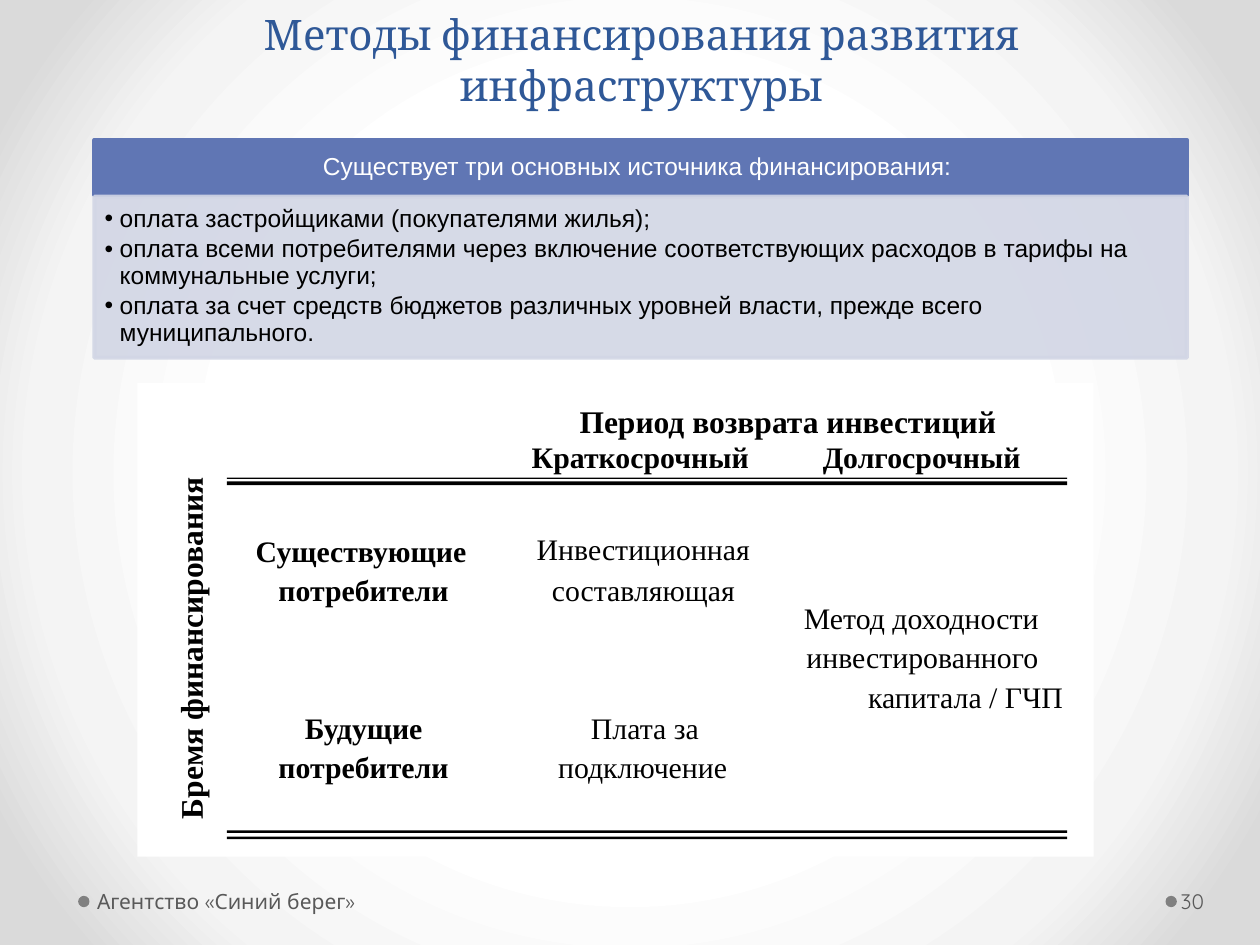
"""Build the slide on methods of financing infrastructure development."""
import lxml.etree
import pptx
import pptx.dml.color
import pptx.enum.shapes
import pptx.enum.text
import pptx.oxml.ns
import pptx.util

Inches, Pt = pptx.util.Inches, pptx.util.Pt
ALIGN, ANCHOR = pptx.enum.text.PP_ALIGN, pptx.enum.text.MSO_ANCHOR
FIT = pptx.enum.text.MSO_AUTO_SIZE
SHAPE = pptx.enum.shapes.MSO_SHAPE
qn = pptx.oxml.ns.qn

TITLE = "Методы финансирования развития инфраструктуры"
SOURCES_HEADING = "Существует три основных источника финансирования: "
SOURCES = [
    "оплата застройщиками (покупателями жилья);",
    "оплата всеми потребителями через включение соответствующих расходов в тарифы на коммунальные услуги;",
    "оплата за счет средств бюджетов различных уровней власти, прежде всего муниципального.",
]
BURDEN = ("Бремя финансирования", 0.14, 4.98, 2.74)
PERIOD = ("Период возврата инвестиций", 4.6, 3.19, 3.35)
HEADINGS = [
    ("Краткосрочный", 4.22, 3.48, 1.75),
    ("Долгосрочный", 6.53, 3.48, 1.59),
    ("Существующие", 2.03, 4.23, 1.76),
    ("потребители", 2.21, 4.54, 1.36),
    ("Будущие", 2.42, 5.63, 1.02),
    ("потребители", 2.21, 5.94, 1.36),
]
METHODS = [
    ("Инвестиционная", 4.26, 4.21, 1.76),
    ("составляющая", 4.38, 4.54, 1.47),
    ("Плата за", 4.69, 5.63, 0.93),
    ("подключение", 4.43, 5.94, 1.36),
    ("Метод доходности", 6.38, 4.76, 1.97),
    ("инвестированного", 6.4, 5.07, 1.92),
    ("капитала / ГЧП", 6.89, 5.39, 1.56),
]
RULES = [(3.79, 0.01), (3.82, 0.03), (6.59, 0.02), (6.64, 0.02)]
FOOTERS = [("Агентство «Синий берег»", 0.72, 3.11, 0.05, 0.62),
           ("30", 9.34, 0.61, 0.03, 9.25)]
BACKDROP = [(50, "FFFFFF"), (76, "F4F4F4"), (92, "DADADA")]


def rgb(color):
    return pptx.dml.color.RGBColor.from_string(color)


def paint_backdrop(slide):
    slide.background.fill.gradient()
    gradient = slide.element.find(".//" + qn("a:gradFill"))
    for child in list(gradient):
        gradient.remove(child)
    stops = lxml.etree.SubElement(gradient, qn("a:gsLst"))
    for position, color in BACKDROP:
        stop = lxml.etree.SubElement(stops, qn("a:gs"), pos=str(position * 1000))
        lxml.etree.SubElement(stop, qn("a:srgbClr"), val=color)
    circle = lxml.etree.SubElement(gradient, qn("a:path"), path="circle")
    lxml.etree.SubElement(circle, qn("a:fillToRect"),
                          dict.fromkeys("ltrb", "50000"))


def add_block(slide, kind, box, fill, line=None, opacity=None):
    block = slide.shapes.add_shape(kind, *map(Inches, box))
    block.shadow.inherit = False
    block.fill.solid()
    block.fill.fore_color.rgb = rgb(fill)
    if line:
        block.line.color.rgb = rgb(line)
        block.line.width = Pt(2.25)
    else:
        block.line.fill.background()
    if opacity:
        for color in block.element.spPr.iter(qn("a:srgbClr")):
            lxml.etree.SubElement(color, qn("a:alpha"), val=str(opacity * 1000))
    return block


def set_frame(shape, insets, anchor=ANCHOR.TOP, wrap=True):
    frame = shape.text_frame
    frame.word_wrap = wrap
    frame.vertical_anchor = anchor
    (frame.margin_left, frame.margin_top,
     frame.margin_right, frame.margin_bottom) = map(Inches, insets)
    return frame


def write(paragraph, text, size, font, color, bold=False, align=ALIGN.LEFT, spacing=None):
    paragraph.alignment = align
    paragraph.line_spacing = spacing
    run = paragraph.add_run()
    run.text = text
    run.font.size = Pt(size)
    run.font.name = font
    run.font.bold = bold
    run.font.color.rgb = rgb(color)


def add_bullet(paragraph):
    properties = paragraph._p.get_or_add_pPr()
    properties.set("marL", str(Inches(0.12)))
    properties.set("indent", str(-Inches(0.12)))
    lxml.etree.SubElement(properties, qn("a:buFont"), typeface="Arial")
    lxml.etree.SubElement(properties, qn("a:buChar"), char="•")


def add_label(slide, label, size=17, bold=False, rotation=0):
    text, left, top, width = label
    height = 0.3 if size == 18 else 0.29
    box = slide.shapes.add_textbox(*map(Inches, (left, top, width, height)))
    box.rotation = rotation
    frame = set_frame(box, (0, 0, 0, 0), wrap=False)
    frame.auto_size = FIT.SHAPE_TO_FIT_TEXT
    write(frame.paragraphs[0], text, size, "Times New Roman", "000000", bold)


def add_sources(slide):
    heading = add_block(slide, SHAPE.RECTANGLE, (0.75, 1.11, 8.67, 0.44), "6076B4", "6076B4")
    frame = set_frame(heading, (0.11, 0.06, 0.11, 0.06), ANCHOR.MIDDLE)
    write(frame.paragraphs[0], SOURCES_HEADING, 14, "Arial", "FFFFFF",
          align=ALIGN.CENTER, spacing=0.9)
    body = add_block(slide, SHAPE.RECTANGLE, (0.75, 1.56, 8.67, 1.28), "D2D6E5", "D2D6E5", 90)
    frame = set_frame(body, (0.08, 0.08, 0.11, 0.12))
    for index, source in enumerate(SOURCES):
        paragraph = frame.add_paragraph() if index else frame.paragraphs[0]
        write(paragraph, source, 14, "Arial", "000000", spacing=0.9)
        paragraph.space_after = Pt(2.1)
        add_bullet(paragraph)


def add_matrix(slide):
    add_block(slide, SHAPE.RECTANGLE, (1.09, 3.04, 7.59, 3.76), "FFFFFF")
    for heading in HEADINGS:
        add_label(slide, heading, bold=True)
    for method in METHODS:
        add_label(slide, method)
    add_label(slide, BURDEN, 18, True, 270)
    add_label(slide, PERIOD, 18, True)
    for top, thickness in RULES:
        add_block(slide, SHAPE.RECTANGLE, (1.8, top, 6.67, thickness), "000000")


def main():
    deck = pptx.Presentation()
    deck.slide_width, deck.slide_height = Inches(10), Inches(7.5)
    slide = deck.slides.add_slide(deck.slide_layouts[6])
    paint_backdrop(slide)

    title = slide.shapes.add_textbox(*map(Inches, (0.59, 0.21, 9, 0.71)))
    frame = set_frame(title, (0.1, 0.05, 0.1, 0.05), ANCHOR.BOTTOM)
    write(frame.paragraphs[0], TITLE, 24, "Cambria", "2F5897", align=ALIGN.CENTER)

    for text, left, width, inset, dot_left in FOOTERS:
        add_block(slide, SHAPE.OVAL, (dot_left, 7.11, 0.09, 0.09), "808080")
        footer = slide.shapes.add_textbox(*map(Inches, (left, 6.95, width, 0.4)))
        frame = set_frame(footer, (inset, 0.05, 0.05, 0.05), ANCHOR.MIDDLE)
        write(frame.paragraphs[0], text, 12, "Quicksand", "595959")

    add_sources(slide)
    add_matrix(slide)
    deck.save("out.pptx")


if __name__ == "__main__":
    main()
